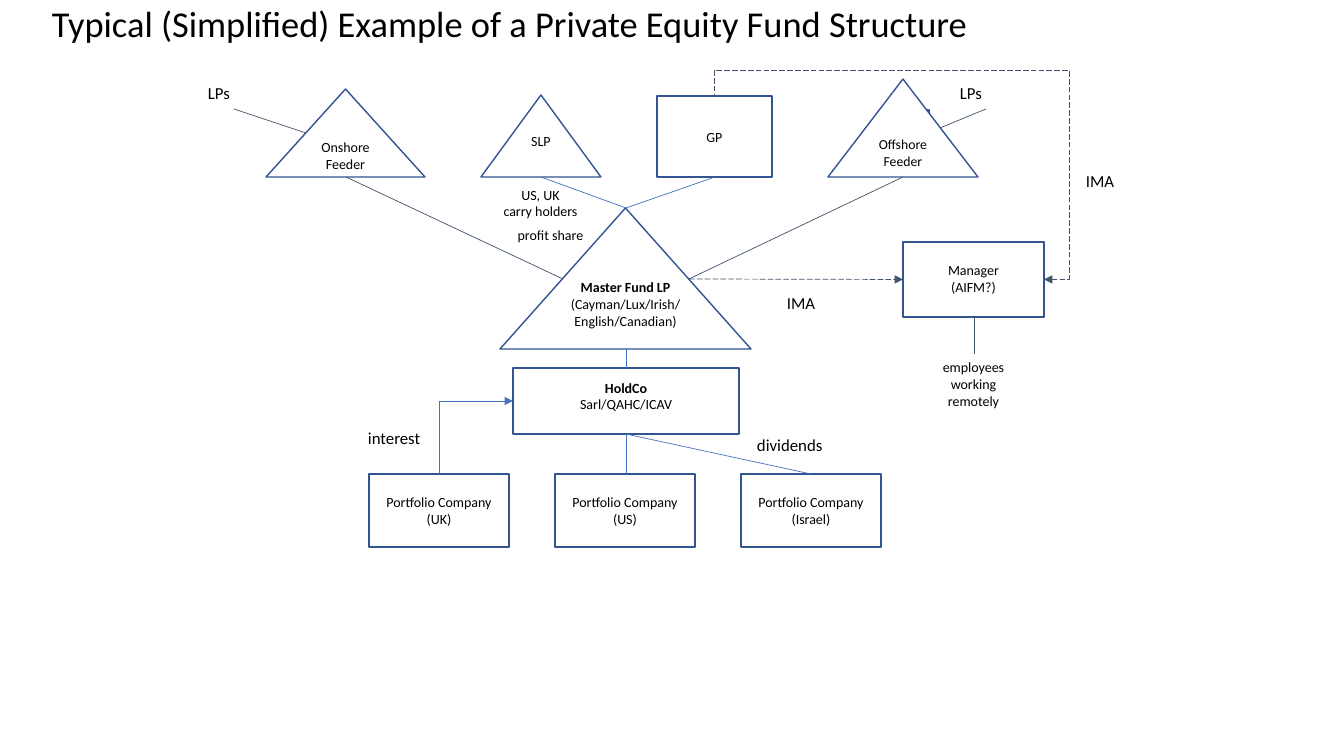
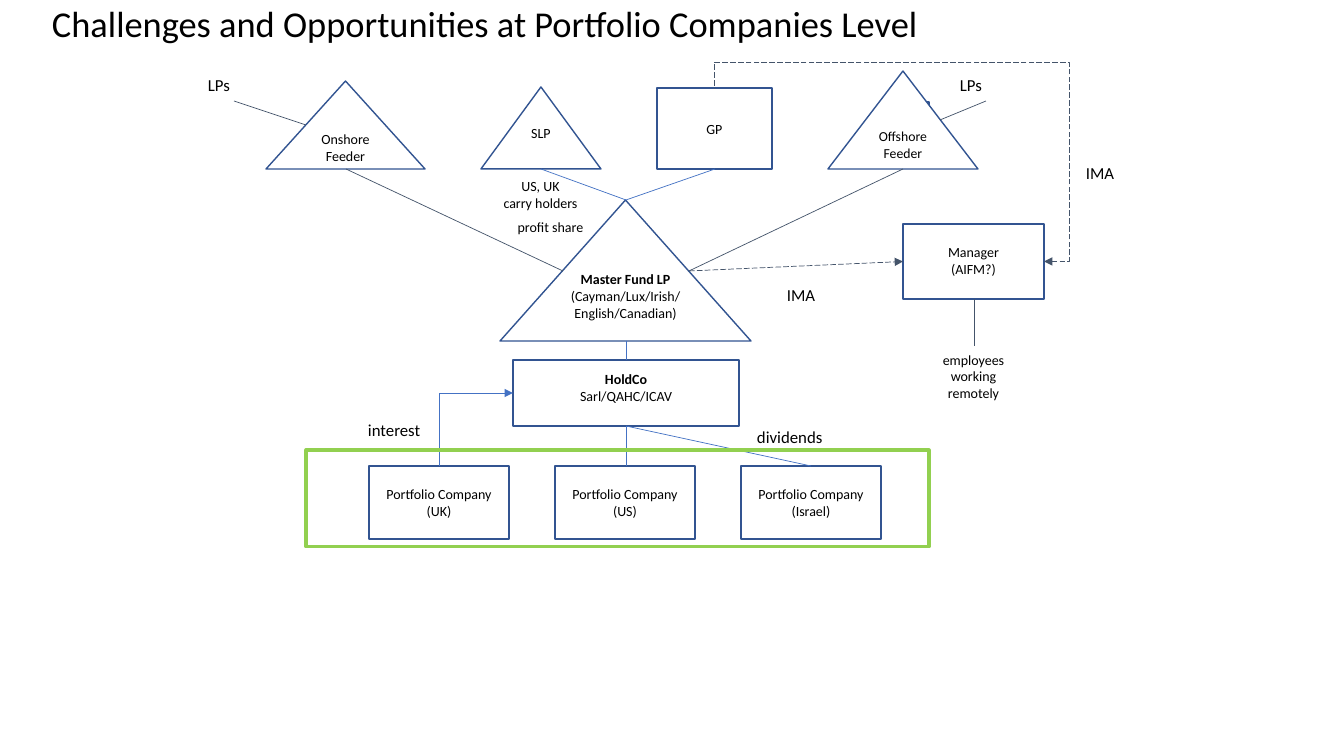
"""Build two slides showing a private equity fund structure."""
from lxml import etree
from pptx import Presentation
from pptx.dml.color import RGBColor
from pptx.enum.dml import MSO_LINE
from pptx.enum.shapes import MSO_CONNECTOR, MSO_SHAPE
from pptx.enum.text import MSO_ANCHOR, PP_ALIGN
from pptx.oxml.ns import qn
from pptx.util import Pt

PX = 12192000 / 1344
BLACK = RGBColor(0x00, 0x00, 0x00)
WHITE = RGBColor(0xFF, 0xFF, 0xFF)
NAVY = RGBColor(0x32, 0x54, 0x91)
SLATE = RGBColor(0x44, 0x54, 0x6A)
BLUE = RGBColor(0x44, 0x72, 0xC4)
GREEN = RGBColor(0x92, 0xD0, 0x50)
TRIANGLE, RECT = MSO_SHAPE.ISOSCELES_TRIANGLE, MSO_SHAPE.RECTANGLE
TOP, MIDDLE = MSO_ANCHOR.TOP, MSO_ANCHOR.MIDDLE
LEFT, CENTER = PP_ALIGN.LEFT, PP_ALIGN.CENTER
STRAIGHT, ELBOW = MSO_CONNECTOR.STRAIGHT, MSO_CONNECTOR.ELBOW

SLIDES = [
    ("Typical (Simplified) Example of a Private Equity Fund Structure", 0, 242),
    ("Challenges and Opportunities at Portfolio Companies Level", -8, 224),
]
MANAGER_X, MANAGER_W, MANAGER_H = 903, 141, 75
COMPANY_X, COMPANY_Y, COMPANY_W, COMPANY_STEP = 369, 474, 140, 186

# name: preset, box, text, size, anchor, insets, bold first line
ENTITIES = {
    "backing": (RECT, (882, 110, 47, 64), "", 10, MIDDLE, (10, 5, 10, 5), False),
    "onshore": (TRIANGLE, (266, 89, 159, 88), "Onshore Feeder", 10, MIDDLE, (10, 5, 10, 5), False),
    "master": (TRIANGLE, (500, 208, 251, 141),
               "Master Fund LP\n(Cayman/Lux/Irish/ English/Canadian)", 10, TOP, (0, 0, 0, 20), True),
    "gp": (RECT, (657, 96, 115, 81), "GP", 10, MIDDLE, (10, 5, 10, 5), False),
    "slp": (TRIANGLE, (481, 95, 120, 82), "SLP", 10, MIDDLE, (10, 0, 10, 31), False),
    "offshore": (TRIANGLE, (828, 79, 150, 98), "Offshore Feeder", 9.8, MIDDLE, (10, 5, 10, 5), False),
    "holdco": (RECT, (513, 368, 226, 66), "HoldCo\nSarl/QAHC/ICAV", 10, TOP, (10, 11, 10, 5), True),
}
for i, country in enumerate(("UK", "US", "Israel")):
    ENTITIES[country] = (RECT, (COMPANY_X + i * COMPANY_STEP, COMPANY_Y, COMPANY_W, 73),
                         f"Portfolio Company\n({country})", 10, MIDDLE, (10, 5, 10, 5), False)

LABELS = [
    ((198, 78, 72, 30), "LPs", 12, LEFT),
    ((950, 78, 72, 30), "LPs", 12, LEFT),
    ((474, 181, 133, 44), "US, UK\ncarry holders", 10, CENTER),
    ((482, 222, 137, 27), "profit share", 10, CENTER),
    ((777, 288, 72, 30), "IMA", 12, LEFT),
    ((1076, 166, 72, 30), "IMA", 12, LEFT),
    ((358, 423, 93, 30), "interest", 12, LEFT),
    ((747, 430, 116, 30), "dividends", 12, LEFT),
    ((914, 354, 119, 61), "employees working remotely", 10, CENTER),
]
LINKS = [
    ((234, 109, 306, 133), SLATE),
    ((940, 128, 986, 109), SLATE),
    ((689, 279, 903, 177), SLATE),
    ((563, 279, 346, 177), SLATE),
    ((715, 177, 626, 208), BLUE),
    ((541, 177, 626, 208), BLUE),
    ((626, 349, 626, 368), BLUE),
    ((626, 434, 626, COMPANY_Y), BLUE),
    ((626, 434, 811, COMPANY_Y), BLUE),
]


def write(sp, text, size, align, anchor=TOP, insets=(10, 5, 10, 5), bold_first=False):
    tf = sp.text_frame
    tf.word_wrap = True
    tf.vertical_anchor = anchor
    tf.margin_left, tf.margin_top, tf.margin_right, tf.margin_bottom = [round(v * PX) for v in insets]
    tf.text = text
    for i, p in enumerate(tf.paragraphs):
        p.alignment = align
        p.font.name = "Calibri"
        p.font.size = Pt(size)
        p.font.bold = bold_first and i == 0
        p.font.color.rgb = BLACK


def connect(s, kind, points, color, dashed=False, arrow=None):
    cxn = s.shapes.add_connector(kind, *[round(v * PX) for v in points])
    cxn.line.color.rgb = color
    cxn.line.width = Pt(0.5)
    if dashed:
        cxn.line.dash_style = MSO_LINE.LONG_DASH
    if arrow:
        etree.SubElement(cxn.line._get_or_add_ln(), qn(f"a:{arrow}"), type="triangle")
    etree.SubElement(cxn._element.spPr, qn("a:effectLst"))
    return cxn


prs = Presentation()
prs.slide_width, prs.slide_height = round(1344 * PX), round(756 * PX)

for title, dy, manager_y in SLIDES:
    s = prs.slides.add_slide(prs.slide_layouts[6])
    sp = s.shapes.add_textbox(*[round(v * PX) for v in (42, 1, 1260, 50)])
    write(sp, title, 26, LEFT)
    sp.text_frame.paragraphs[0].line_spacing = 0.9

    manager = (RECT, (MANAGER_X, manager_y - dy, MANAGER_W, MANAGER_H),
               "Manager\n(AIFM?)", 10, TOP, (10, 20, 10, 20), False)
    shapes = {}
    for name, entity in {**ENTITIES, "manager": manager}.items():
        preset, (x, y, w, h), text, size, anchor, insets, bold_first = entity
        sp = s.shapes.add_shape(preset, *[round(v * PX) for v in (x, y + dy, w, h)])
        sp.shadow.inherit = False
        sp.fill.solid()
        sp.fill.fore_color.rgb = WHITE
        sp.line.color.rgb = NAVY
        sp.line.width = Pt(1)
        if text:
            write(sp, text, size, CENTER, anchor, insets, bold_first)
        shapes[name] = sp

    for (x, y, w, h), text, size, align in LABELS:
        sp = s.shapes.add_textbox(*[round(v * PX) for v in (x, y + dy, w, h)])
        write(sp, text, size, align)

    for (x1, y1, x2, y2), color in LINKS:
        connect(s, STRAIGHT, (x1, y1 + dy, x2, y2 + dy), color)
    manager_mid = manager_y + MANAGER_H / 2
    connect(s, STRAIGHT, (974, manager_y + MANAGER_H, 974, 354 + dy), SLATE)
    connect(s, STRAIGHT, (689, 279 + dy, MANAGER_X, manager_mid), SLATE, True, "tailEnd")

    right, gp_top = MANAGER_X + MANAGER_W, 96 + dy
    width, height = right - 715, manager_mid - gp_top
    bends = {"adj1": -25 / width, "adj2": 1 + 26 / height}
    elbows = [
        ("bentConnector2", "holdco", 1, "UK", 0, (513, 401 + dy, 439, COMPANY_Y + dy), BLUE, False, {}),
        ("bentConnector4", "manager", 3, "gp", 0, (right, manager_mid, 715, gp_top), SLATE, True, bends),
    ]
    for preset, begin, begin_site, end, end_site, points, color, dashed, adjusts in elbows:
        cxn = connect(s, ELBOW, points, color, dashed, "headEnd")
        cxn.begin_connect(shapes[begin], begin_site)
        cxn.end_connect(shapes[end], end_site)
        geom = cxn._element.spPr.find(qn("a:prstGeom"))
        geom.set("prst", preset)
        for name, value in adjusts.items():
            etree.SubElement(geom.find(qn("a:avLst")), qn("a:gd"), name=name,
                             fmla=f"val {round(value * 100000)}")

sp = s.shapes.add_shape(RECT, *[round(v * PX) for v in (306, 450, 623, 97)])
sp.shadow.inherit = False
sp.fill.background()
sp.line.color.rgb = GREEN
sp.line.width = Pt(2.25)

prs.save("out.pptx")
